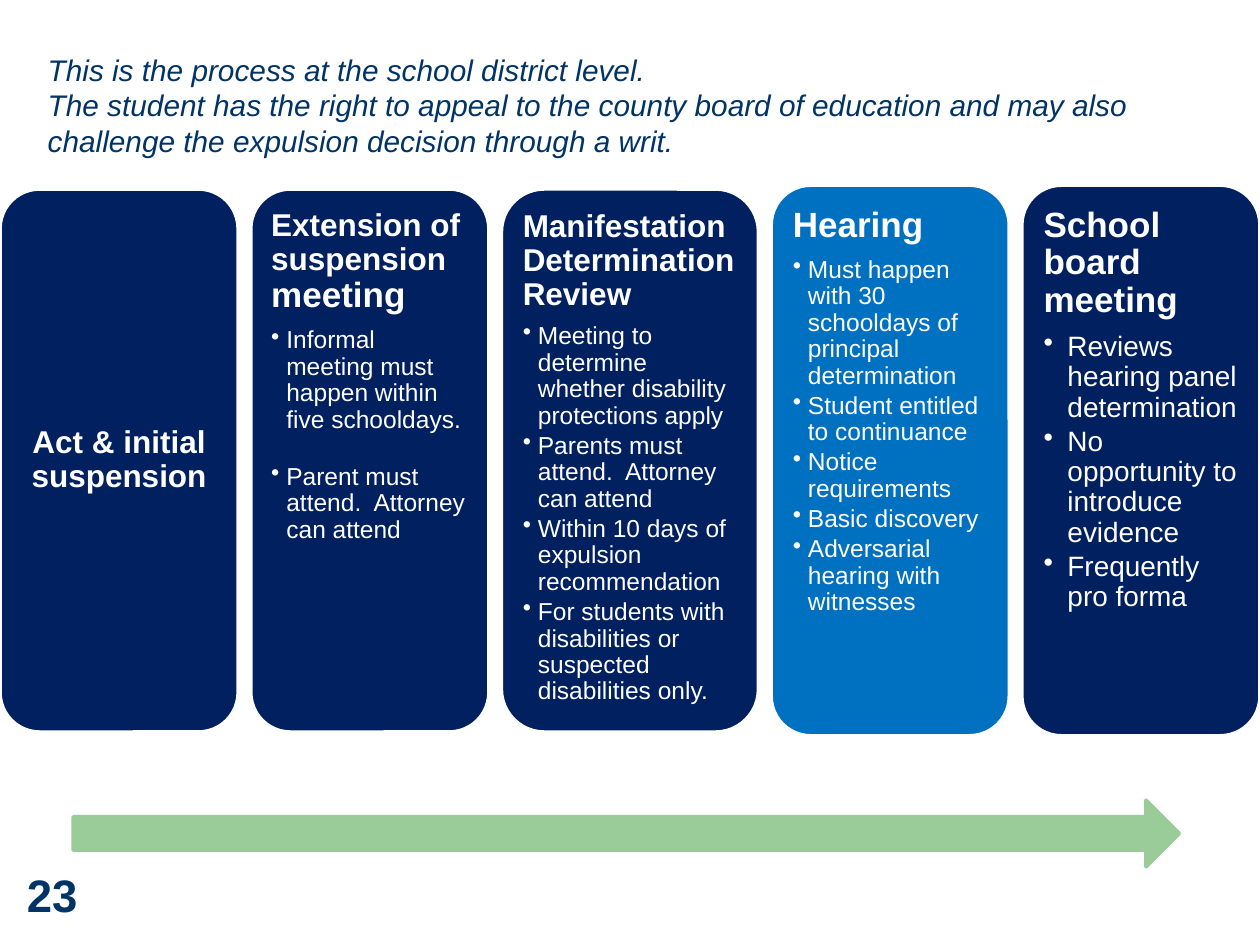
from pptx import Presentation
from pptx.dml.color import RGBColor
from pptx.enum.shapes import MSO_SHAPE
from pptx.enum.text import MSO_ANCHOR, MSO_AUTO_SIZE, PP_ALIGN
from pptx.oxml.ns import qn
from pptx.util import Inches, Pt
from lxml import etree

ROUNDED, ARROW = MSO_SHAPE.ROUNDED_RECTANGLE, MSO_SHAPE.RIGHT_ARROW
TOP, MIDDLE, BOTTOM = MSO_ANCHOR.TOP, MSO_ANCHOR.MIDDLE, MSO_ANCHOR.BOTTOM
LEFT, CENTER = PP_ALIGN.LEFT, PP_ALIGN.CENTER
FIT_SHAPE = MSO_AUTO_SIZE.SHAPE_TO_FIT_TEXT

FONT = "Arial"
NAVY, BLUE, GREEN, INK, WHITE = "002060", "0070C0", "99CC99", "003366", "FFFFFF"

INTRO = [
    "This is the process at the school district level.",
    "The student has the right to appeal to the county board of education "
    "and may also challenge the expulsion decision through a writ.",
]

# Each heading is a list of (text, size) runs
STAGES = [
    {"heading": [("Act & initial suspension", 18)], "centred": True},
    {"heading": [("Extension of suspension ", 18), ("meeting", 20)],
     "bullet_gap": 17.4,
     "bullets": ["Informal meeting must happen within five schooldays.",
                 "Parent must attend.  Attorney can attend"]},
    {"heading": [("Manifestation Determination Review", 18)], "width": 2.04,
     "bullets": ["Meeting to determine whether disability protections apply",
                 "Parents must attend.  Attorney can attend",
                 "Within 10 days of expulsion recommendation",
                 "For students with disabilities or suspected disabilities only."]},
    {"heading": [("Hearing", 20)], "height": 4.37, "inset": 0.08, "fill": BLUE,
     "bullets": ["Must happen with 30 schooldays of principal determination",
                 "Student entitled to continuance",
                 "Notice requirements",
                 "Basic discovery",
                 "Adversarial hearing with witnesses"]},
    {"heading": [("School board meeting", 20)], "height": 4.37, "inset": 0.08,
     "bullet_size": 16, "indent": 0.19,
     "bullets": ["Reviews hearing panel determination",
                 "No opportunity to introduce evidence",
                 "Frequently pro forma"]},
]


def colour(value):
    return RGBColor.from_string(value)


def add_run(paragraph, text, size, ink, bold=False, italic=False):
    run = paragraph.add_run()
    run.text = text
    font = run.font
    font.name, font.size, font.bold, font.italic = FONT, Pt(size), bold, italic
    font.color.rgb = colour(ink)


def set_insets(frame, inset):
    frame.margin_left = frame.margin_right = Inches(inset)
    frame.margin_top = frame.margin_bottom = Inches(inset)


def add_bullet_mark(paragraph, indent):
    props = paragraph._p.get_or_add_pPr()
    props.set("marL", str(Inches(indent)))
    props.set("indent", str(-Inches(indent)))
    etree.SubElement(props, qn("a:buChar")).set("char", "•")


def add_block(slide, preset, box, fill, line):
    block = slide.shapes.add_shape(preset, *map(Inches, box))
    block.shadow.inherit = False
    block.fill.solid()
    block.fill.fore_color.rgb = colour(fill)
    block.line.color.rgb = colour(line)
    block.line.width = Pt(2)
    return block


def add_intro(slide, box):
    frame = slide.shapes.add_textbox(*map(Inches, box)).text_frame
    frame.word_wrap = True
    frame.auto_size = FIT_SHAPE
    for index, sentence in enumerate(INTRO):
        paragraph = frame.add_paragraph() if index else frame.paragraphs[0]
        add_run(paragraph, sentence, 17, INK, italic=True)


def add_stage(slide, box, stage):
    card = add_block(slide, ROUNDED, box, stage.get("fill", NAVY), WHITE)
    frame = card.text_frame
    frame.word_wrap = True
    set_insets(frame, stage.get("inset", 0.07))
    centred = stage.get("centred", False)
    frame.vertical_anchor = MIDDLE if centred else TOP

    # Heading
    heading = frame.paragraphs[0]
    heading.alignment = CENTER if centred else LEFT
    heading.line_spacing = 0.9
    heading.space_after = Pt(stage["heading"][-1][1] * 0.35)
    for text, size in stage["heading"]:
        add_run(heading, text, size, WHITE, bold=True)

    # Bullets
    size = stage.get("bullet_size", 14)
    for text in stage.get("bullets", []):
        bullet = frame.add_paragraph()
        bullet.alignment = LEFT
        bullet.level = 1
        bullet.line_spacing = 0.9
        bullet.space_after = Pt(stage.get("bullet_gap", size * 0.15))
        add_bullet_mark(bullet, stage.get("indent", 0.12))
        add_run(bullet, text, size, WHITE)


def add_process(slide, box):
    """Cards run left to right with equal gaps, centred on the box's middle."""
    left, top, _, height = box
    gap = 0.1
    for stage in STAGES:
        card_width = stage.get("width", 1.89)
        card_height = stage.get("height", 4.31)
        card_top = top + (height - card_height) / 2
        add_stage(slide, (left, card_top, card_width, card_height), stage)
        left += card_width + gap


def add_page_number(slide, box):
    frame = slide.shapes.add_textbox(*map(Inches, box)).text_frame
    frame.word_wrap = False
    frame.auto_size = FIT_SHAPE
    frame.vertical_anchor = BOTTOM
    set_insets(frame, 0.05)
    frame.paragraphs[0].alignment = CENTER
    add_run(frame.paragraphs[0], "23", 26, INK, bold=True)


def main():
    deck = Presentation()
    deck.slide_width, deck.slide_height = Inches(10), Inches(7.5)
    slide = deck.slides.add_slide(deck.slide_layouts[6])
    add_process(slide, (0, 1.47, 10, 4.37))
    add_intro(slide, (0.28, 0.36, 9.72, 0.96))
    add_block(slide, ARROW, (0.58, 6.35, 8.78, 0.53), GREEN, GREEN)
    add_page_number(slide, (0.16, 6.82, 0.51, 0.54))
    deck.save("out.pptx")


if __name__ == "__main__":
    main()
